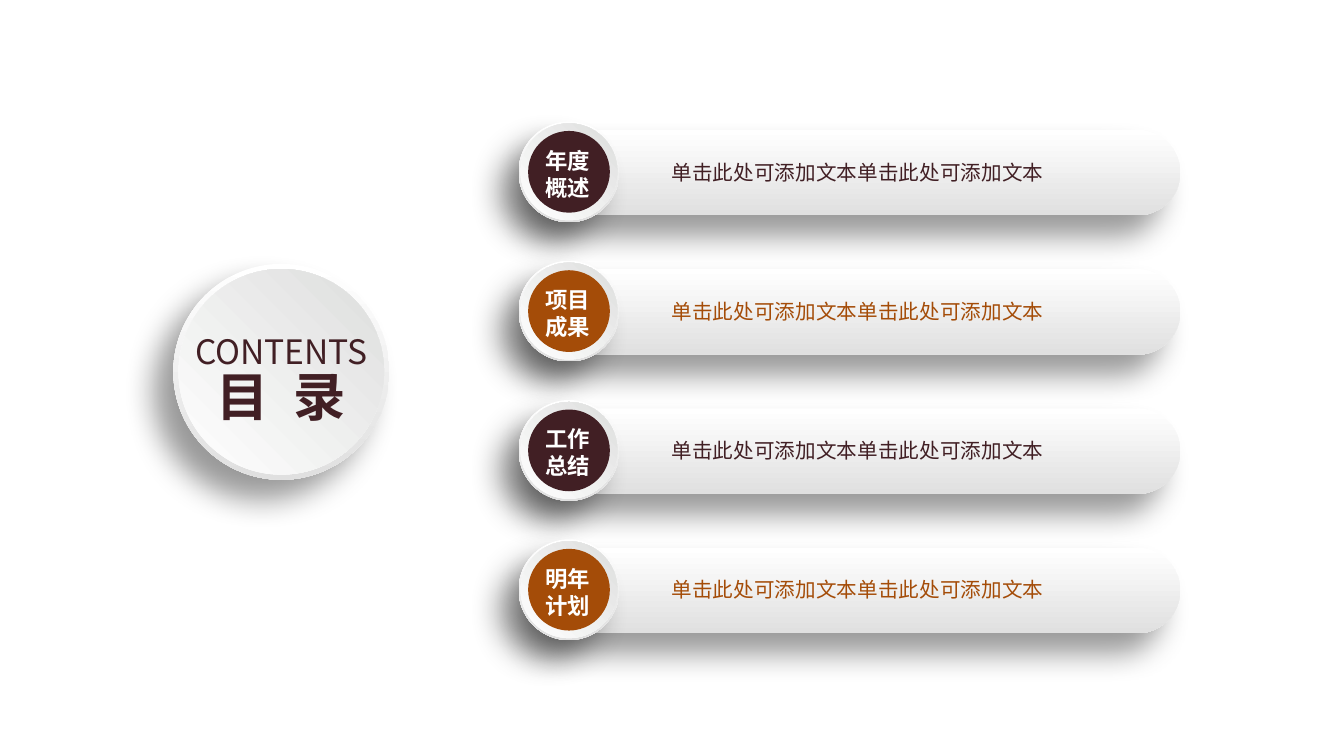
from lxml.etree import SubElement
from pptx import Presentation
from pptx.dml.color import RGBColor
from pptx.enum.shapes import MSO_SHAPE
from pptx.enum.text import MSO_ANCHOR, PP_ALIGN
from pptx.oxml.ns import qn
from pptx.util import Cm, Pt

# Content
TITLE, SUB = "目 录", "CONTENTS"
LINE = "单击此处可添加文本单击此处可添加文本"
ROWS = ["年度概述", "项目成果", "工作总结", "明年计划"]

# Look
FONT = "Noto Sans CJK SC"
WINE, RUST, WHITE = "411F24", "A44C08", "FFFFFF"
RIM = ("E0E0E0", 270)
FACE = ("DDDEDD", 45)

# Layout in cm, given by centres
DIAL_X, DIAL_Y = 7.09, 9.37
BADGE_X, BAR_X, LINE_X = 14.34, 21.68, 21.61
TOP, PITCH = 4.33, 3.51


def rgb(code):
    return RGBColor.from_string(code)


def box(x, y, wide, high):
    return Cm(x - wide / 2), Cm(y - high / 2), Cm(wide), Cm(high)


def shade(shape):
    """Soft shadow falling to the lower left."""
    fx = shape.element.spPr.find(qn("a:effectLst"))
    cast = SubElement(fx, qn("a:outerShdw"), blurRad=str(Pt(22)),
                      dist=str(Pt(20)), dir=str(135 * 60000),
                      algn="tr", rotWithShape="0")
    tone = SubElement(cast, qn("a:srgbClr"), val="000000")
    SubElement(tone, qn("a:alpha"), val="40000")


def draw(group, kind, area, fill, cast=False):
    shape = group.shapes.add_shape(kind, *area)
    shape.shadow.inherit = False
    shape.line.fill.background()
    if isinstance(fill, str):
        shape.fill.solid()
        shape.fill.fore_color.rgb = rgb(fill)
    else:
        end, angle = fill
        shape.fill.gradient()
        shape.fill.gradient_angle = angle
        for stop, code in zip(shape.fill.gradient_stops, (WHITE, end)):
            stop.color.rgb = rgb(code)
    if cast:
        shade(shape)
    return shape


def disc(group, x, y, size, fill, cast=False):
    draw(group, MSO_SHAPE.OVAL, box(x, y, size, size), fill, cast)


def write(shape, text, size, color, bold=False, wrap=True):
    frame = shape.text_frame
    frame.text = text
    frame.word_wrap = wrap
    frame.vertical_anchor = MSO_ANCHOR.MIDDLE
    para = frame.paragraphs[0]
    para.alignment = PP_ALIGN.CENTER
    font = para.font
    font.name, font.size, font.bold = FONT, Pt(size), bold
    font.color.rgb = rgb(color)
    props = para.runs[0].font
    props.name = FONT
    SubElement(para.runs[0]._r.rPr, qn("a:ea"), typeface=FONT)
    return para.runs[0]


deck = Presentation()
deck.slide_width, deck.slide_height = Cm(33.87), Cm(19.05)
slide = deck.slides.add_slide(deck.slide_layouts[5])

# Dial with the heading
dial = slide.shapes.add_group_shape()
disc(dial, DIAL_X, DIAL_Y, 5.44, RIM, cast=True)
disc(dial, DIAL_X, DIAL_Y, 5.18, FACE)
sub = dial.shapes.add_textbox(*box(DIAL_X, 8.84, 5.1, 1.27))
write(sub, SUB, 24, WINE, wrap=False)

title = slide.shapes.title
title.left, title.top, title.width, title.height = box(DIAL_X, 9.97, 3.96, 1.85)
run = write(title, TITLE, 37.4, WINE, bold=True, wrap=False)
run._r.rPr.set("spc", "430")
title.element.getparent().append(title.element)  # in front of the dial

# Rows: bar, badge, label and line
for i, name in enumerate(ROWS):
    y = TOP + i * PITCH
    color = (WINE, RUST)[i % 2]
    row = slide.shapes.add_group_shape()
    bar = draw(row, MSO_SHAPE.ROUNDED_RECTANGLE,
               box(BAR_X, y + 0.02, 16.13, 2.16), RIM, cast=True)
    bar.adjustments[0] = 0.5
    disc(row, BADGE_X, y, 2.54, RIM, cast=True)
    disc(row, BADGE_X, y, 2.44, FACE)
    disc(row, BADGE_X, y, 2.06, color)
    label = row.shapes.add_textbox(*box(14.3, y + 0.05, 2.08, 1.63))
    write(label, name, 16, WHITE, bold=True)
    line = row.shapes.add_textbox(*box(LINE_X, y, 11.25, 0.89))
    write(line, LINE, 14.7, color)

deck.save("out.pptx")
